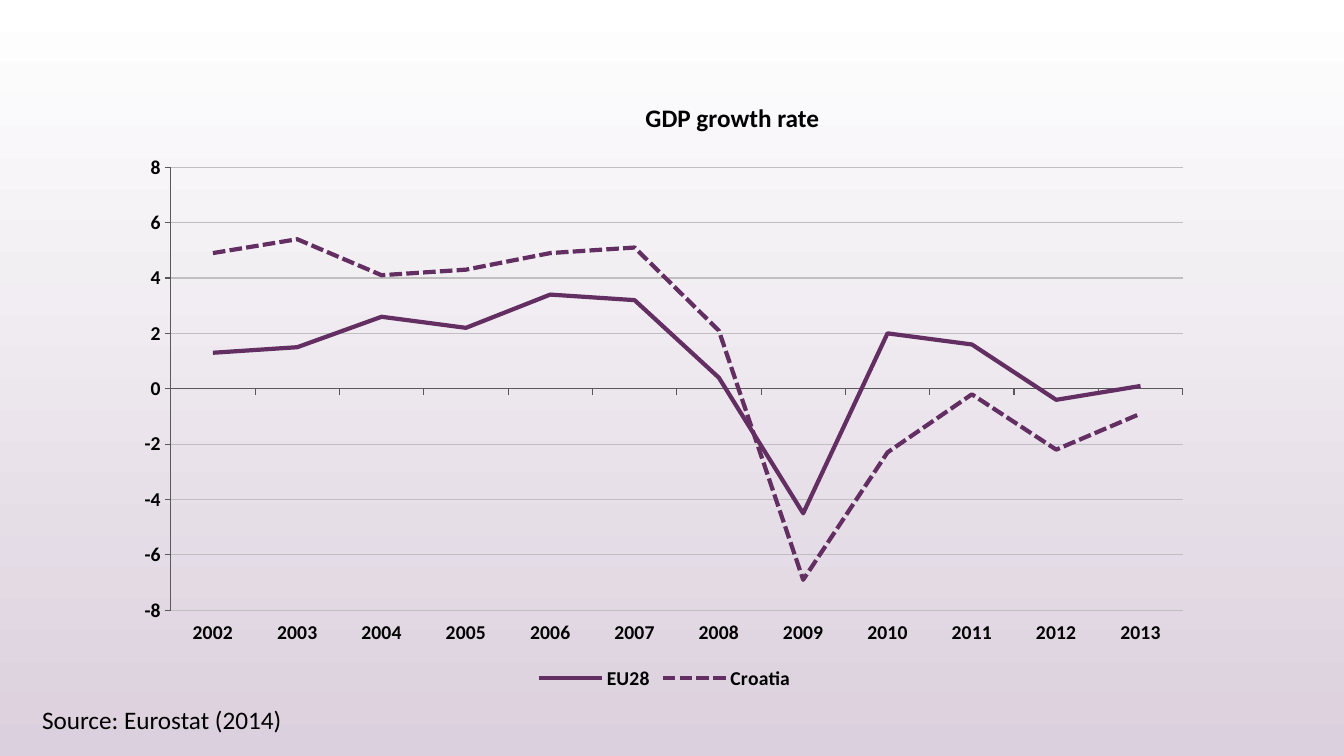
from lxml import etree
from pptx import Presentation
from pptx.chart.data import CategoryChartData
from pptx.dml.color import RGBColor
from pptx.enum.chart import XL_CHART_TYPE, XL_LEGEND_POSITION, XL_TICK_LABEL_POSITION, XL_TICK_MARK
from pptx.enum.dml import MSO_LINE
from pptx.enum.text import MSO_ANCHOR, MSO_AUTO_SIZE, PP_ALIGN
from pptx.oxml.ns import qn
from pptx.util import Cm, Pt

COLORS = {"text": "000000", "line": "632E62", "grid": "BFBFBF", "axis": "595959",
          "top": "FFFFFF", "bottom": "DBD0DD"}
FONT = "Calibri"


def rgb(name):
    return RGBColor.from_string(COLORS[name])


def write(frame, text, size=18, bold=False, align=PP_ALIGN.LEFT, spacing=1.0,
          anchor=MSO_ANCHOR.TOP, auto_size=MSO_AUTO_SIZE.NONE):
    frame.word_wrap = True
    frame.auto_size = auto_size
    frame.vertical_anchor = anchor
    paragraph = frame.paragraphs[0]
    paragraph.alignment = align
    paragraph.line_spacing = spacing
    run = paragraph.add_run()
    run.text = text
    run.font.name = FONT
    run.font.size = Pt(size)
    run.font.bold = bold
    run.font.color.rgb = rgb("text")


prs = Presentation()
prs.slide_width, prs.slide_height = Cm(33.87), Cm(19.05)
slide = prs.slides.add_slide(prs.slide_layouts[5])

# Background: white at the top to mauve at the bottom
background = slide.background.fill
background.gradient()
background.gradient_angle = 270
for stop, (position, name) in zip(background.gradient_stops, [(0, "top"), (1, "bottom")]):
    stop.position = position
    stop.color.rgb = rgb(name)

# Title
title = slide.shapes.title
title.left, title.top, title.width, title.height = Cm(12.09), Cm(2.39), Cm(12.73), Cm(1.24)
write(title.text_frame, "GDP growth rate", bold=True, align=PP_ALIGN.CENTER,
      spacing=0.9, anchor=MSO_ANCHOR.MIDDLE)

# Growth rates
growth = CategoryChartData()
growth.categories = [str(year) for year in range(2002, 2014)]
growth.add_series("EU28", [1.3, 1.5, 2.6, 2.2, 3.4, 3.2, 0.4, -4.5, 2, 1.6, -0.4, 0.1])
growth.add_series("Croatia", [4.9, 5.4, 4.1, 4.3, 4.9, 5.1, 2.1, -6.9, -2.3, -0.2, -2.2, -0.9])
chart = slide.shapes.add_chart(XL_CHART_TYPE.LINE, Cm(2.21), Cm(3.56), Cm(29.08), Cm(13.94),
                               growth).chart
chart.has_title = False
chart.font.name = FONT
chart.font.size = Pt(10)
chart.font.color.rgb = rgb("text")
chart.plots[0].vary_by_categories = False
for series, dash in zip(chart.plots[0].series, [MSO_LINE.SOLID, MSO_LINE.SQUARE_DOT]):
    series.smooth = False
    series.format.line.color.rgb = rgb("line")
    series.format.line.width = Pt(3)
    series.format.line.dash_style = dash

# Axes
years, rates = chart.category_axis, chart.value_axis
for axis in (years, rates):
    axis.major_tick_mark = XL_TICK_MARK.OUTSIDE
    axis.minor_tick_mark = XL_TICK_MARK.NONE
    axis.format.line.color.rgb = rgb("axis")
    axis.format.line.width = Pt(0.75)
years.tick_label_position = XL_TICK_LABEL_POSITION.LOW
rates.minimum_scale, rates.maximum_scale, rates.major_unit = -8, 8, 2
rates.tick_labels.number_format = "General"
rates.tick_labels.number_format_is_linked = False
rates.major_gridlines.format.line.color.rgb = rgb("grid")
rates.major_gridlines.format.line.width = Pt(0.75)

# Legend
chart.has_legend = True
chart.legend.position = XL_LEGEND_POSITION.BOTTOM
chart.legend.include_in_layout = False
for font in (years.tick_labels.font, rates.tick_labels.font, chart.legend.font):
    font.name = FONT
    font.size = Pt(14)
    font.bold = True
    font.color.rgb = rgb("text")

# Plot area position inside the chart
plot_area = chart.plots[0]._element.getparent()
for old_layout in plot_area.findall(qn("c:layout")):
    plot_area.remove(old_layout)
layout = etree.Element(qn("c:layout"))
manual = etree.SubElement(layout, qn("c:manualLayout"))
for tag, value in [("layoutTarget", "inner"), ("xMode", "edge"), ("yMode", "edge"),
                   ("x", 0.072), ("y", 0.047), ("w", 0.877), ("h", 0.801)]:
    etree.SubElement(manual, qn(f"c:{tag}")).set("val", str(value))
plot_area.insert(0, layout)

# Source line
source = slide.shapes.add_textbox(Cm(0.81), Cm(17.63), Cm(12.57), Cm(1.02))
write(source.text_frame, "Source: Eurostat (2014)", auto_size=MSO_AUTO_SIZE.SHAPE_TO_FIT_TEXT)

prs.save("out.pptx")
